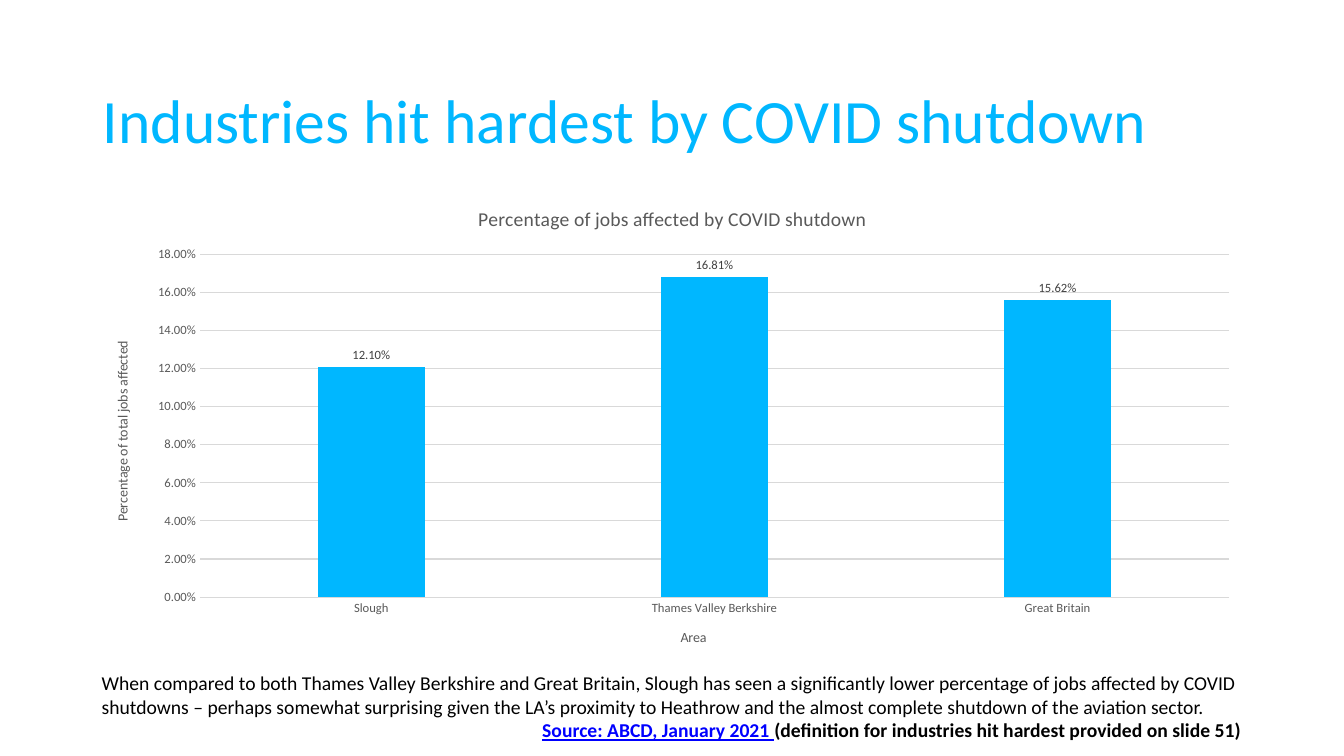
from dataclasses import dataclass

from pptx import Presentation, util as u
from pptx.chart.data import CategoryChartData
from pptx.dml.color import RGBColor
from pptx.enum import chart as ch, text as t

PX = 9144  # 100 px to the inch
FONT = "Calibri"
COLORS = {
    "accent": "00B7FF",
    "ink": "000000",
    "link": "0000FF",
    "axis": "595959",
    "label": "404040",
    "grid": "D9D9D9",
}
JOBS_AFFECTED = {
    "Slough": 0.121,
    "Thames Valley Berkshire": 0.1681,
    "Great Britain": 0.1562,
}


@dataclass(frozen=True)
class Box:
    left: int
    top: int
    width: int
    height: int

    def emu(self) -> tuple[int, ...]:
        return tuple(n * PX for n in (self.left, self.top, self.width, self.height))


@dataclass(frozen=True)
class Run:
    text: str
    color: str = "ink"
    underline: bool = False


@dataclass(frozen=True)
class Para:
    runs: tuple[Run, ...]
    align: t.PP_ALIGN = t.PP_ALIGN.LEFT
    bold: bool = False


TITLE_BOX = Box(92, 61, 1150, 124)
CHART_BOX = Box(92, 185, 1150, 476)
NOTE_BOX = Box(91, 661, 1150, 81)
NOTE = (
    Para((Run(
        "When compared to both Thames Valley Berkshire and Great Britain, Slough has "
        "seen a significantly lower percentage of jobs affected by COVID shutdowns – "
        "perhaps somewhat surprising given the LA’s proximity to Heathrow and the "
        "almost complete shutdown of the aviation sector."),)),
    Para((
        Run("Source: ABCD, January 2021 ", "link", True),
        Run("(definition for industries hit hardest provided on slide 51)"),
    ), t.PP_ALIGN.RIGHT, True),
)


def rgb(name: str) -> RGBColor:
    return RGBColor.from_string(COLORS[name])


def style(font, size: float, color: str, bold: bool = False) -> None:
    font.name, font.size, font.bold = FONT, u.Pt(size), bold
    font.color.rgb = rgb(color)


def grid_line(line) -> None:
    line.color.rgb = rgb("grid")
    line.width = u.Pt(0.75)


def caption(owner, words: str, size: float) -> None:
    """Title a chart or one of its axes."""
    title = owner.chart_title if hasattr(owner, "chart_title") else owner.axis_title
    title.text_frame.text = words
    style(title.text_frame.paragraphs[0].font, size, "axis")


def add_title(s, words: str) -> None:
    sp = s.shapes.title
    sp.left, sp.top, sp.width, sp.height = TITLE_BOX.emu()
    tf = sp.text_frame
    tf.text = words
    tf.vertical_anchor = t.MSO_ANCHOR.MIDDLE
    p = tf.paragraphs[0]
    p.alignment, p.line_spacing = t.PP_ALIGN.LEFT, 0.9
    style(p.font, 44, "accent")


def add_jobs_chart(s) -> None:
    data = CategoryChartData(number_format="0.00%")
    data.categories = list(JOBS_AFFECTED)
    data.add_series("Jobs affected", list(JOBS_AFFECTED.values()))
    chart = s.shapes.add_chart(
        ch.XL_CHART_TYPE.COLUMN_CLUSTERED, *CHART_BOX.emu(), data).chart
    style(chart.font, 10, "ink")
    chart.has_legend = False
    caption(chart, "Percentage of jobs affected by COVID shutdown", 14)

    # Axes
    areas, shares = chart.category_axis, chart.value_axis
    for axis, words in ((areas, "Area"), (shares, "Percentage of total jobs affected")):
        caption(axis, words, 10)
        style(axis.tick_labels.font, 9, "axis")
        axis.major_tick_mark = axis.minor_tick_mark = ch.XL_TICK_MARK.NONE
    grid_line(areas.format.line)
    grid_line(shares.major_gridlines.format.line)
    shares.format.line.fill.background()
    shares.minimum_scale, shares.maximum_scale, shares.major_unit = 0, 0.18, 0.02
    shares.tick_labels.number_format = "0.00%"
    shares.tick_labels.number_format_is_linked = False

    # Columns and their labels
    plot = chart.plots[0]
    plot.gap_width, plot.overlap, plot.vary_by_categories = 219, -27, False
    series = plot.series[0]
    series.format.fill.solid()
    series.format.fill.fore_color.rgb = rgb("accent")
    labels = series.data_labels
    labels.show_value = True
    labels.position = ch.XL_LABEL_POSITION.OUTSIDE_END
    labels.number_format, labels.number_format_is_linked = "0.00%", False
    style(labels.font, 9, "label")


def add_note(s, paras: tuple[Para, ...]) -> None:
    tf = s.shapes.add_textbox(*NOTE_BOX.emu()).text_frame
    tf.word_wrap = True
    for i, para in enumerate(paras):
        p = tf.add_paragraph() if i else tf.paragraphs[0]
        p.alignment = para.align
        p.font.name, p.font.size, p.font.bold = FONT, u.Pt(14), para.bold
        for run in para.runs:
            r = p.add_run()
            r.text = run.text
            r.font.color.rgb = rgb(run.color)
            r.font.underline = run.underline


def main() -> None:
    prs = Presentation()
    prs.slide_width, prs.slide_height = u.Inches(13.33), u.Inches(7.5)
    s = prs.slides.add_slide(prs.slide_layouts.get_by_name("Title Only"))
    add_title(s, "Industries hit hardest by COVID shutdown")
    add_jobs_chart(s)
    add_note(s, NOTE)
    prs.save("out.pptx")


if __name__ == "__main__":
    main()
